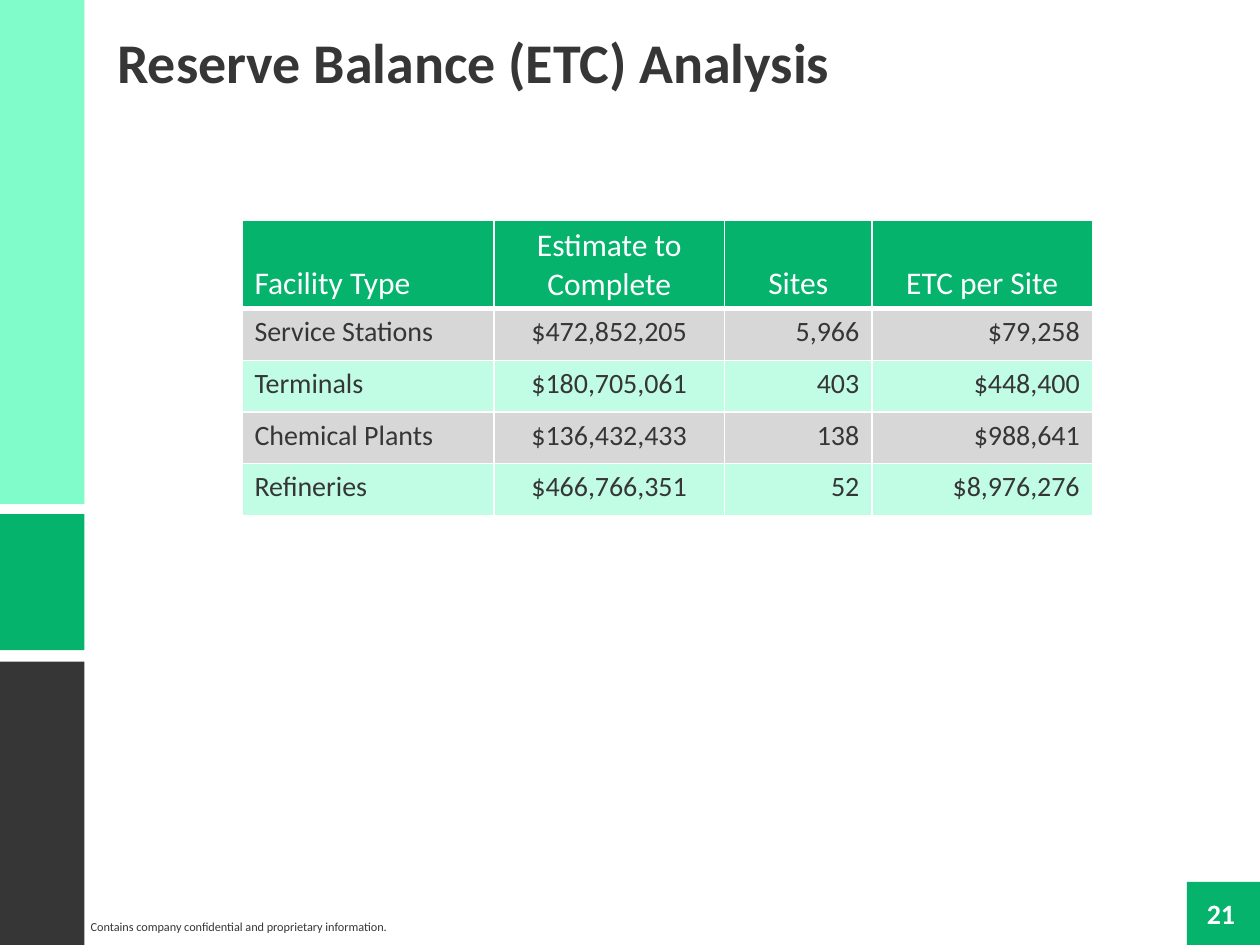
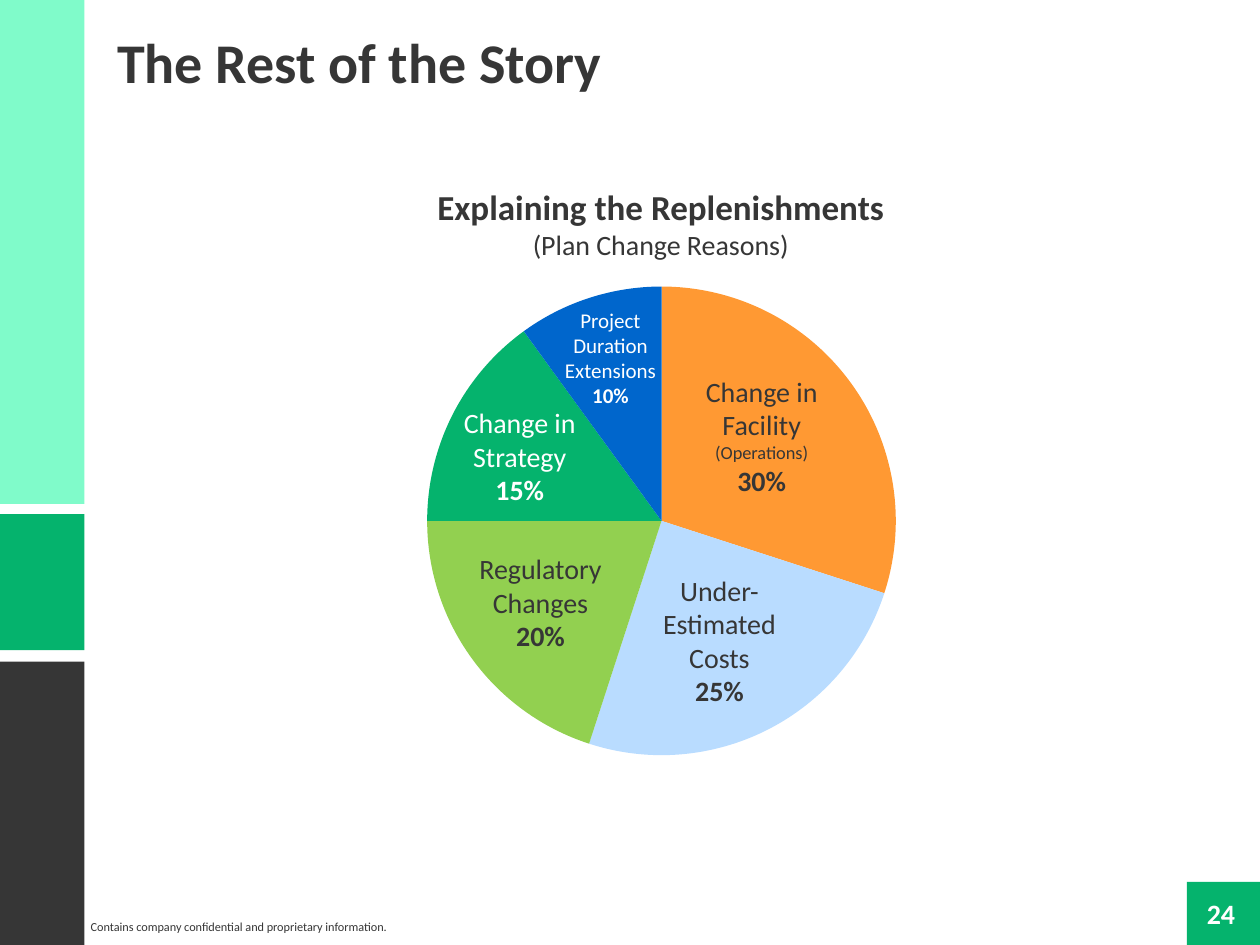
"""Build two slides on reserve balances and the reasons for plan changes."""
from dataclasses import dataclass

from lxml import etree
from pptx import Presentation
from pptx.chart import data as cd
from pptx.dml.color import RGBColor
from pptx.enum import chart as ch, shapes, text
from pptx.oxml import ns
from pptx.util import Inches, Pt

LEFT, MID, RIGHT = text.PP_ALIGN.LEFT, text.PP_ALIGN.CENTER, text.PP_ALIGN.RIGHT
TOP, BASE = text.MSO_ANCHOR.TOP, text.MSO_ANCHOR.BOTTOM


@dataclass(frozen=True)
class Theme:
    font: str = "Calibri"
    ink: str = "363636"
    white: str = "FFFFFF"
    green: str = "05B36D"
    mint: str = "80FBCA"
    pale: str = "C0FDE4"
    gray: str = "D7D7D7"
    orange: str = "FF9933"
    sky: str = "B9DCFF"
    lime: str = "92D050"
    blue: str = "0066CC"
    title: float = 32
    sub: float = 20
    head: float = 18
    body: float = 16
    small: float = 12
    note: float = 10.5
    foot: float = 7


THEME = Theme()


def paint(item, color):
    item.fill.solid()
    item.fill.fore_color.rgb = RGBColor.from_string(color)


def write(frame, lines, size=THEME.body, color=THEME.ink, bold=False, align=LEFT):
    """Fill a frame; a line is a string or a (string, overrides) pair."""
    if isinstance(lines, str):
        lines = [lines]
    for n, line in enumerate(lines):
        words, own = (line, {}) if isinstance(line, str) else line
        para = frame.paragraphs[0] if n == 0 else frame.add_paragraph()
        para.alignment = align
        para.space_before = Pt(0)
        run = para.add_run()
        run.text = words
        font = run.font
        font.name = THEME.font
        font.size = Pt(own.get("size", size))
        font.bold = own.get("bold", bold)
        font.color.rgb = RGBColor.from_string(color)


def edge(cell, side, width):
    props = cell._tc.get_or_add_tcPr()
    line = etree.SubElement(props, ns.qn(f"a:ln{side}"), w=str(Pt(width)))
    fill = etree.SubElement(line, ns.qn("a:solidFill"))
    etree.SubElement(fill, ns.qn("a:srgbClr"), val=THEME.white)


class Deck:
    """Hold the theme, the presentation and the current slide."""

    def __init__(self, theme):
        self.theme = theme
        self.show = Presentation()
        self.show.slide_width = Inches(10)
        self.show.slide_height = Inches(7.5)
        self.slide = None

    def page(self, title, number):
        t = self.theme
        self.slide = self.show.slides.add_slide(self.show.slide_layouts[5])
        for top, tall, color in ((0, 4, t.mint), (4.08, 1.08, t.green), (5.25, 2.25, t.ink)):
            self.block(0, top, 0.67, tall, color)
        self.block(9.42, 7, 0.58, 0.5, t.green)
        self.label("Contains company confidential and proprietary information.",
                   0.72, 7.25, 2.45, 0.22, pad=0, size=t.foot)
        self.label(str(number), 9.42, 7.07, 0.54, 0.37, pad=0,
                   color=t.white, bold=True, align=MID)
        head = self.slide.shapes.title
        head.left, head.top, head.width, head.height = map(Inches, (0.83, 0.17, 9, 0.64))
        head.text_frame.vertical_anchor = TOP
        write(head.text_frame, title, size=t.title, bold=True)

    def block(self, left, top, wide, tall, color):
        box = self.slide.shapes.add_shape(
            shapes.MSO_SHAPE.RECTANGLE, *map(Inches, (left, top, wide, tall)))
        box.shadow.inherit = False
        paint(box, color)
        box.line.fill.background()

    def label(self, lines, left, top, wide, tall, pad=0.1, **style):
        box = self.slide.shapes.add_textbox(*map(Inches, (left, top, wide, tall)))
        frame = box.text_frame
        frame.word_wrap = True
        frame.margin_left = frame.margin_right = Inches(pad)
        write(frame, lines, **style)

    def table(self, rows, left, top, wides, talls, aligns):
        t = self.theme
        grid = self.slide.shapes.add_table(
            len(rows), len(wides),
            *map(Inches, (left, top, sum(wides), sum(talls)))).table
        grid.horz_banding = False
        for col, wide in zip(grid.columns, wides):
            col.width = Inches(wide)
        for r, (row, tall) in enumerate(zip(rows, talls)):
            grid.rows[r].height = Inches(tall)
            for c, words in enumerate(row):
                cell = grid.cell(r, c)
                for side in "LRTB":
                    edge(cell, side, 3 if r == 0 and side == "B" else 1)
                if r == 0:
                    cell.vertical_anchor = BASE
                    paint(cell, t.green)
                    write(cell.text_frame, words, size=t.head, color=t.white,
                          align=MID if c else LEFT)
                else:
                    paint(cell, t.gray if r % 2 else t.pale)
                    write(cell.text_frame, words, align=aligns[c])

    def pie(self, slices, left, top, wide, tall, plot):
        t = self.theme
        data = cd.CategoryChartData()
        data.categories = [str(n + 1) for n in range(len(slices))]
        data.add_series("Series 1", [value for value, _ in slices])
        chart = self.slide.shapes.add_chart(
            ch.XL_CHART_TYPE.PIE, *map(Inches, (left, top, wide, tall)), data).chart
        chart.has_legend = chart.has_title = False
        chart.font.name, chart.font.size = t.font, Pt(t.head)
        chart.font.color.rgb = RGBColor.from_string(t.ink)
        pie = chart.plots[0]
        pie.vary_by_categories = True
        for n, (_, color) in enumerate(slices):
            form = pie.series[0].points[n].format
            paint(form, color)
            form.line.fill.background()
        area = chart._chartSpace.find(".//" + ns.qn("c:plotArea"))
        old = area.find(ns.qn("c:layout"))
        if old is not None:
            area.remove(old)
        layout = etree.Element(ns.qn("c:layout"))
        area.insert(0, layout)
        manual = etree.SubElement(layout, ns.qn("c:manualLayout"))
        spots = dict(x=(1 - plot / wide) / 2, y=(1 - plot / tall) / 2,
                     w=plot / wide, h=plot / tall)
        marks = dict(layoutTarget="inner", xMode="edge", yMode="edge", **spots)
        for name, value in marks.items():
            etree.SubElement(manual, ns.qn(f"c:{name}"), val=str(value))


def main():
    t = THEME
    deck = Deck(t)

    deck.page("Reserve Balance (ETC) Analysis", 21)
    sites = [
        ("Facility Type", "Estimate to Complete", "Sites", "ETC per Site"),
        ("Service Stations", "$472,852,205", "5,966", "$79,258"),
        ("Terminals", "$180,705,061", "403", "$448,400"),
        ("Chemical Plants", "$136,432,433", "138", "$988,641"),
        ("Refineries", "$466,766,351", "52", "$8,976,276"),
    ]
    deck.table(sites, 1.92, 1.75, (2, 1.83, 1.17, 1.75), [0.7] + [0.41] * 4,
               (LEFT, MID, RIGHT, RIGHT))

    deck.page("The Rest of the Story", 24)
    causes = [
        (30, t.orange, ["Change in Facility", ("(Operations)", {"size": t.note})],
         (5.42, 2.92, 1.25, 1.13), t.ink, t.body),
        (25, t.sky, ["Under-Estimated Costs"], (4.92, 4.5, 1.58, 1.18), t.ink, t.body),
        (20, t.lime, ["Regulatory Changes"], (3.58, 4.33, 1.42, 0.94), t.ink, t.body),
        (15, t.green, ["Change in Strategy"], (3.5, 3.17, 1.25, 0.94), t.white, t.body),
        (10, t.blue, ["Project Duration Extensions"], (4.22, 2.39, 1.25, 0.94),
         t.white, t.small),
    ]
    deck.pie([cause[:2] for cause in causes], 3.25, 2.08, 4, 4.11, plot=3.72)
    for share, _, lines, spot, color, size in causes:
        deck.label(lines + [(f"{share}%", {"bold": True})], *spot,
                   size=size, color=color, align=MID)
    deck.label([("Explaining the Replenishments", {"size": t.sub, "bold": True}),
                "(Plan Change Reasons)"], 3.08, 1.42, 4.33, 0.71, align=MID)

    deck.show.save("out.pptx")


if __name__ == "__main__":
    main()
